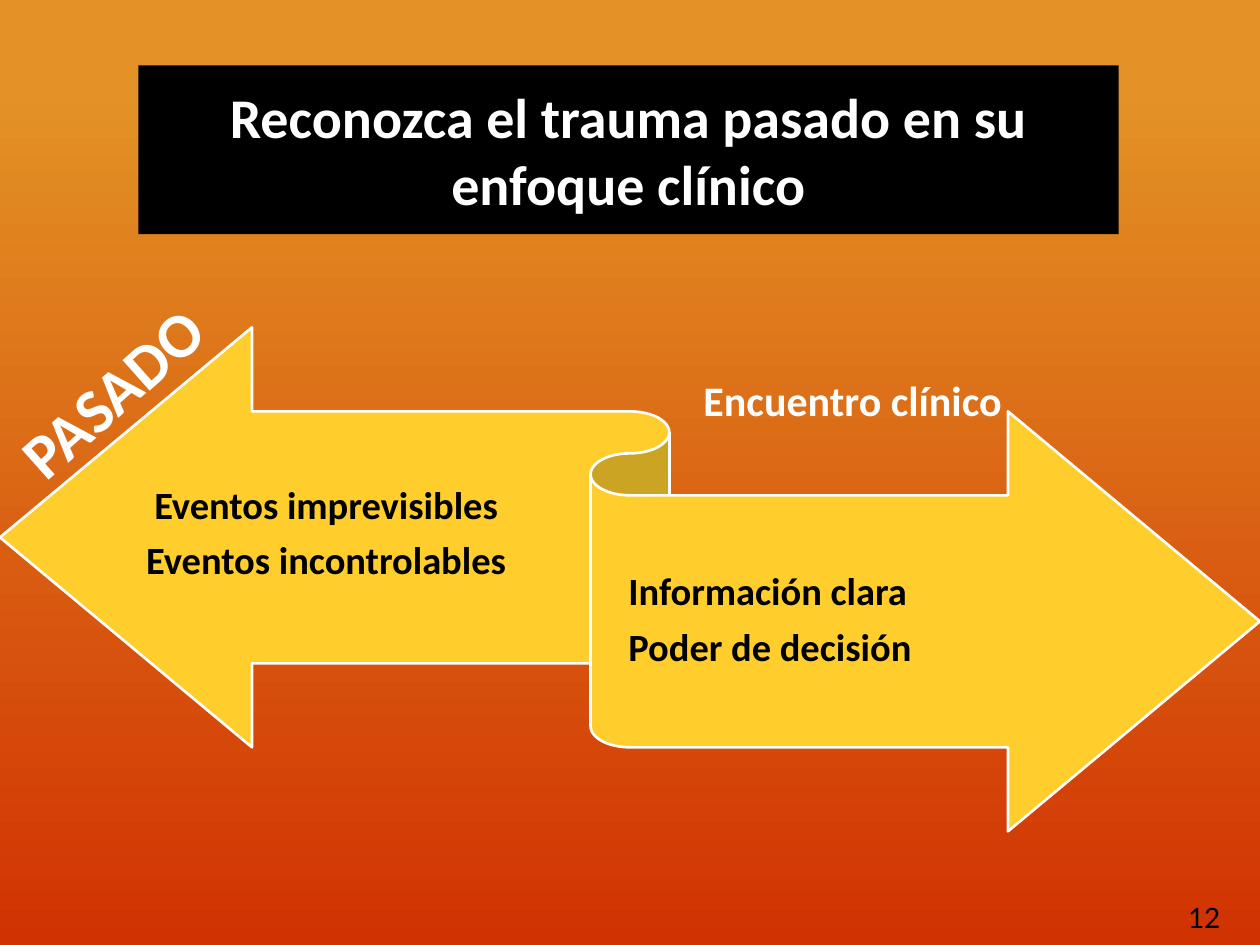
from pptx import Presentation
from pptx.dml.color import RGBColor
from pptx.enum.shapes import MSO_SHAPE
from pptx.enum.text import MSO_ANCHOR, PP_ALIGN
from pptx.util import Cm, Pt

BLACK, WHITE, YELLOW = "000000", "FFFFFF", "FFCE2D"
BACKGROUND = [(0.09, "E39325"), (1, "D13202")]

TITLE = "Reconozca el trauma pasado en su enfoque clínico"
PAST = ["Eventos imprevisibles", "Eventos incontrolables"]
PRESENT = ["Información clara", "Poder de decisión"]

# left, top, width, height in cm
TITLE_BOX = (2.79, 1.32, 19.76, 3.4)
RIBBON_BOX = (0, 6.6, 25.4, 10.16)
PAST_BOX = (0.48, 8.86, 12.19, 3.84)
PRESENT_BOX = (12.67, 10.92, 12.19, 3.2)
PAST_LABEL_BOX = (-0.91, 7.01, 6.32, 1.8)
PRESENT_LABEL_BOX = (13.89, 7.42, 6.6, 2.31)
NUMBER_BOX = (23.7, 18.03, 1.7, 1.02)


def rgb(color):
    return RGBColor.from_string(color)


def add_filled(slide, kind, box, fill, line=None):
    sp = slide.shapes.add_shape(kind, *map(Cm, box))
    sp.shadow.inherit = False
    sp.fill.solid()
    sp.fill.fore_color.rgb = rgb(fill)
    if line:
        sp.line.color.rgb = rgb(line)
        sp.line.width = Pt(1.5)
    else:
        sp.line.fill.background()
    return sp


def write(sp, lines, size, color, align=PP_ALIGN.CENTER, bold=True,
          font="Calibri", anchor=MSO_ANCHOR.TOP):
    tf = sp.text_frame
    tf.word_wrap = True
    tf.vertical_anchor = anchor
    tf.text = "\n".join(lines)
    for p in tf.paragraphs:
        p.alignment = align
        for r in p.runs:
            r.font.name = font
            r.font.size = Pt(size)
            r.font.bold = bold
            r.font.color.rgb = rgb(color)
    return sp


def add_text(slide, box, lines, size, color, **style):
    return write(slide.shapes.add_textbox(*map(Cm, box)), lines, size, color, **style)


def add_arrow_text(slide, box, lines, align):
    sp = add_text(slide, box, lines, 22, BLACK, align=align, anchor=MSO_ANCHOR.MIDDLE)
    tf = sp.text_frame
    tf.margin_left = tf.margin_right = 0
    for p in tf.paragraphs:
        p.line_spacing = 0.9
        p.space_after = Pt(7.7)


def main():
    prs = Presentation()
    prs.slide_width, prs.slide_height = Cm(25.4), Cm(19.05)
    slide = prs.slides.add_slide(prs.slide_layouts[6])

    fill = slide.background.fill
    fill.gradient()
    fill.gradient_angle = 270
    for stop, (position, color) in zip(fill.gradient_stops, BACKGROUND):
        stop.position = position
        stop.color.rgb = rgb(color)

    title = add_filled(slide, MSO_SHAPE.RECTANGLE, TITLE_BOX, BLACK)
    write(title, [TITLE], 32, WHITE, anchor=MSO_ANCHOR.MIDDLE)

    add_filled(slide, MSO_SHAPE.LEFT_RIGHT_RIBBON, RIBBON_BOX, YELLOW, WHITE)
    add_arrow_text(slide, PAST_BOX, PAST, PP_ALIGN.CENTER)
    add_arrow_text(slide, PRESENT_BOX, PRESENT, PP_ALIGN.LEFT)

    label = add_text(slide, PAST_LABEL_BOX, ["PASADO"], 36, WHITE)
    label.rotation = 318.3
    add_text(slide, PRESENT_LABEL_BOX, ["Encuentro clínico"], 24, WHITE)
    add_text(slide, NUMBER_BOX, ["12"], 16, BLACK,
             align=PP_ALIGN.LEFT, bold=False, font="Lato")

    prs.save("out.pptx")


if __name__ == "__main__":
    main()
